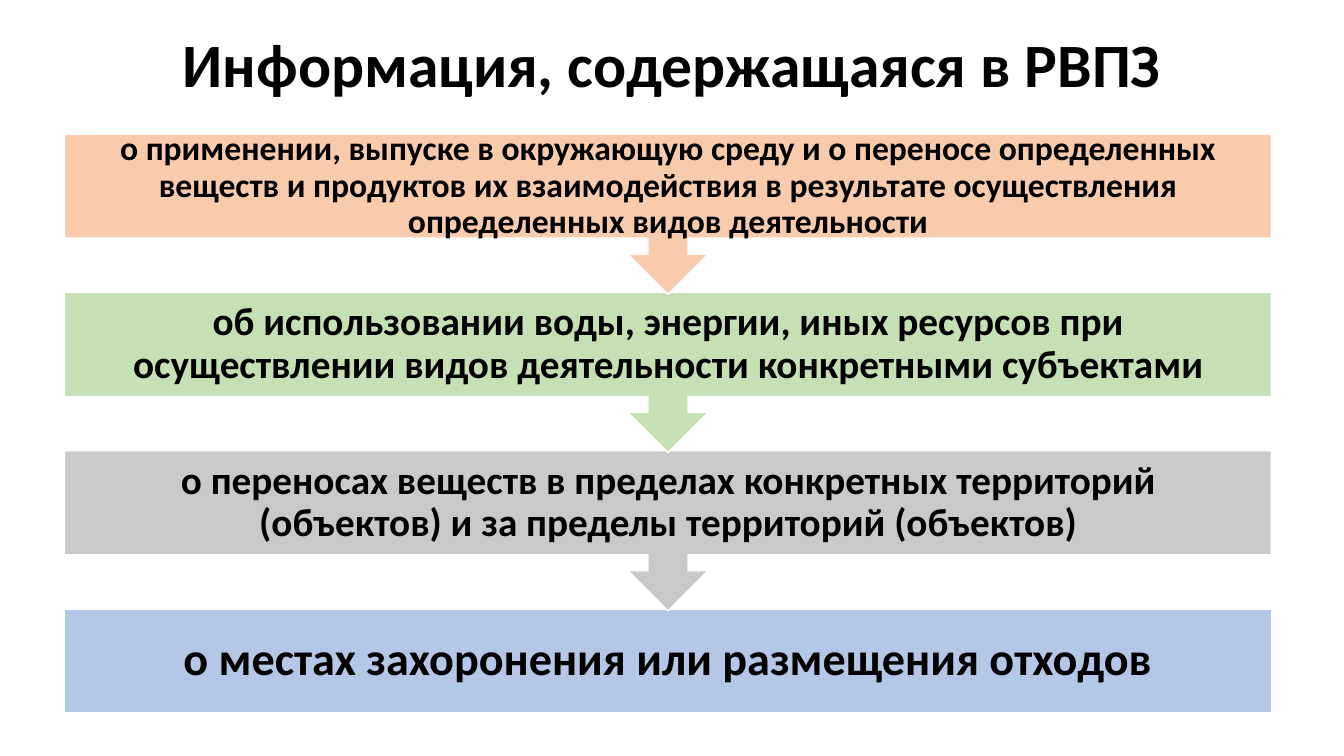
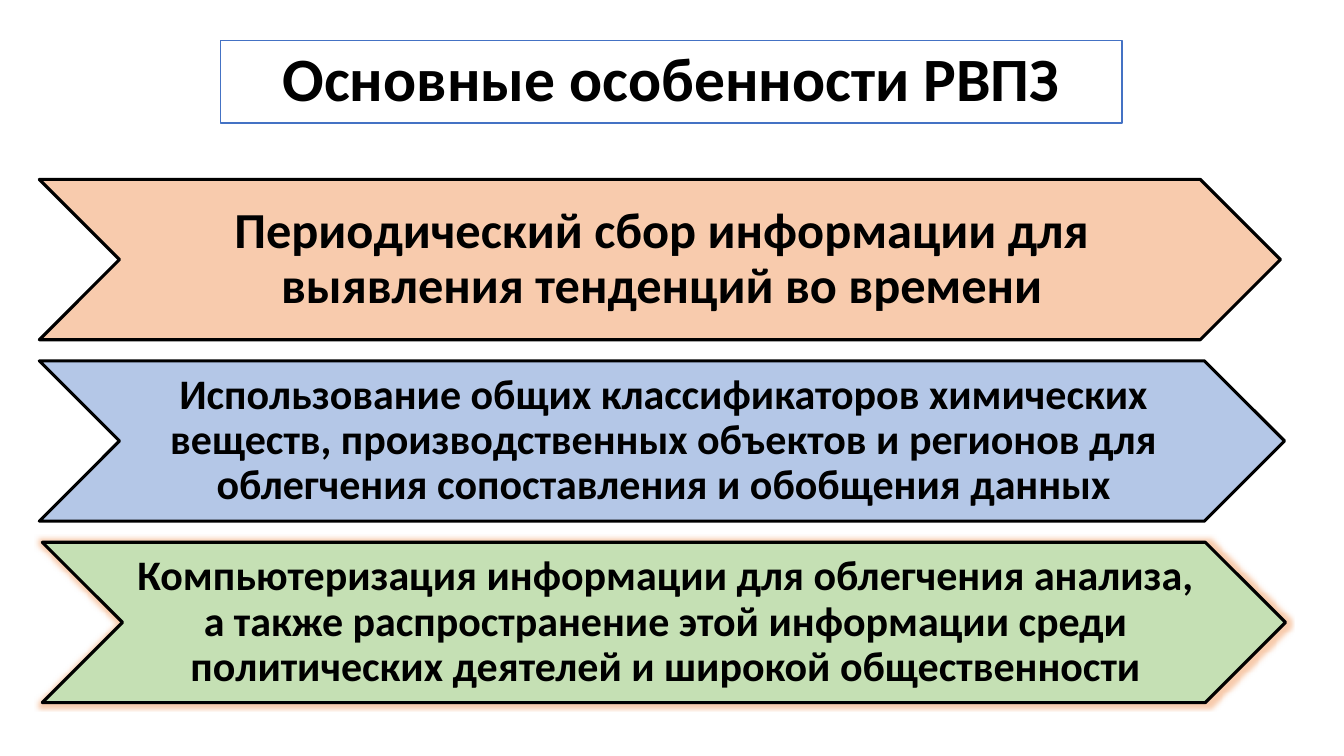
from dataclasses import dataclass

from lxml import etree
from pptx import Presentation
from pptx.dml.color import RGBColor
from pptx.enum.shapes import MSO_SHAPE
from pptx.enum.text import MSO_ANCHOR, PP_ALIGN
from pptx.oxml.ns import qn
from pptx.util import Inches, Pt

RECT = MSO_SHAPE.RECTANGLE
CALLOUT = MSO_SHAPE.DOWN_ARROW_CALLOUT
CHEVRON = MSO_SHAPE.CHEVRON
MIDDLE = MSO_ANCHOR.MIDDLE
CENTER = PP_ALIGN.CENTER


@dataclass(frozen=True)
class Theme:
    font: str = "Calibri"
    text: str = "000000"
    white: str = "FFFFFF"
    accent: str = "4472C4"
    peach: str = "F8CBAD"
    green: str = "C5E0B4"
    gray: str = "C9C9C9"
    blue: str = "B4C7E7"
    glow: str = "ED7D31"
    title_size: int = 44
    line_spacing: float = 0.9


T = Theme()

# Content: text, fill, type size, inset
INFO_TITLE = "Информация, содержащаяся в РВПЗ"
INFO_STEPS = [
    ("о применении, выпуске в окружающую среду и о переносе определенных "
     "веществ и продуктов их взаимодействия в результате осуществления "
     "определенных видов деятельности", T.peach, 24, 0.19),
    ("об использовании воды, энергии, иных ресурсов при осуществлении видов "
     "деятельности конкретными субъектами", T.green, 28, 0.22),
    ("о переносах веществ в пределах конкретных территорий (объектов) "
     "и за пределы территорий (объектов)", T.gray, 28, 0.22),
    ("о местах захоронения или размещения отходов", T.blue, 33, 0.26),
]

# Content: text, fill, type size, left, width, glow
FEATURES_TITLE = "Основные особенности РВПЗ"
FEATURES = [
    ("Периодический сбор информации для выявления тенденций во времени",
     T.peach, 36, 0.39, 12.31, False),
    ("Использование общих классификаторов химических веществ, "
     "производственных объектов и регионов для облегчения сопоставления "
     "и обобщения данных", T.blue, 30, 0.39, 12.35, False),
    ("Компьютеризация информации для облегчения анализа, а также "
     "распространение этой информации среди политических деятелей "
     "и широкой общественности", T.green, 30, 0.42, 12.33, True),
]

# Layout in inches
STEP_LEFT, STEP_TOP, STEP_WIDTH, STEP_PITCH = 0.64, 1.33, 11.97, 1.57
STEP_HEIGHT, CALLOUT_HEIGHT = 1.03, 1.59
FEATURE_TOP, FEATURE_PITCH, FEATURE_HEIGHT = 1.78, 1.8, 1.59


def write(sp, text, size, insets):
    """Centred bold text; insets are left, top, right, bottom."""
    tf = sp.text_frame
    left, top, right, bottom = map(Inches, insets)
    frame = {"word_wrap": True, "vertical_anchor": MIDDLE,
             "margin_left": left, "margin_top": top,
             "margin_right": right, "margin_bottom": bottom}
    for name, value in frame.items():
        setattr(tf, name, value)
    p = tf.paragraphs[0]
    p.alignment = CENTER
    p.line_spacing = T.line_spacing
    r = p.add_run()
    r.text = text
    for name, value in {"name": T.font, "size": Pt(size), "bold": True}.items():
        setattr(r.font, name, value)
    r.font.color.rgb = RGBColor.from_string(T.text)


def add_block(s, kind, box, fill, line, line_width):
    sp = s.shapes.add_shape(kind, *map(Inches, box))
    sp.shadow.inherit = False
    sp.fill.solid()
    sp.fill.fore_color.rgb = RGBColor.from_string(fill)
    sp.line.color.rgb = RGBColor.from_string(line)
    sp.line.width = Pt(line_width)
    return sp


def add_title(s, text, box, framed=False):
    if framed:
        sp = add_block(s, RECT, box, T.white, T.accent, 1)
    else:
        sp = s.shapes.add_textbox(*map(Inches, box))
    write(sp, text, T.title_size, (0.1, 0.05, 0.1, 0.05))


def add_glow(sp):
    effects = sp.element.spPr.find(qn("a:effectLst"))
    glow = etree.SubElement(effects, qn("a:glow"), rad=str(Pt(5)))
    color = etree.SubElement(glow, qn("a:srgbClr"), val=T.glow)
    etree.SubElement(color, qn("a:alpha"), val="40000")


def build_info(s):
    # Bottom step first, so each arrow tip lies over the next step
    last = len(INFO_STEPS) - 1
    for i, (text, fill, size, inset) in reversed(list(enumerate(INFO_STEPS))):
        kind, height = (RECT, STEP_HEIGHT) if i == last else (CALLOUT, CALLOUT_HEIGHT)
        box = (STEP_LEFT, STEP_TOP + i * STEP_PITCH, STEP_WIDTH, height)
        sp = add_block(s, kind, box, fill, T.white, 1)
        write(sp, text, size, [inset] * 4)
    add_title(s, INFO_TITLE, (0.92, 0.28, 11.5, 0.78))


def build_features(s):
    add_title(s, FEATURES_TITLE, (2.19, 0.4, 8.94, 0.82), framed=True)
    for i, (text, fill, size, left, width, glowing) in enumerate(FEATURES):
        box = (left, FEATURE_TOP + i * FEATURE_PITCH, width, FEATURE_HEIGHT)
        sp = add_block(s, CHEVRON, box, fill, T.text, 2.25)
        write(sp, text, size, (0.04, 0.02, 0, 0.02))
        if glowing:
            add_glow(sp)


def main():
    prs = Presentation()
    prs.slide_width, prs.slide_height = Inches(13.33), Inches(7.5)
    blank = prs.slide_layouts[6]
    for build in (build_info, build_features):
        build(prs.slides.add_slide(blank))
    prs.save("out.pptx")


if __name__ == "__main__":
    main()
